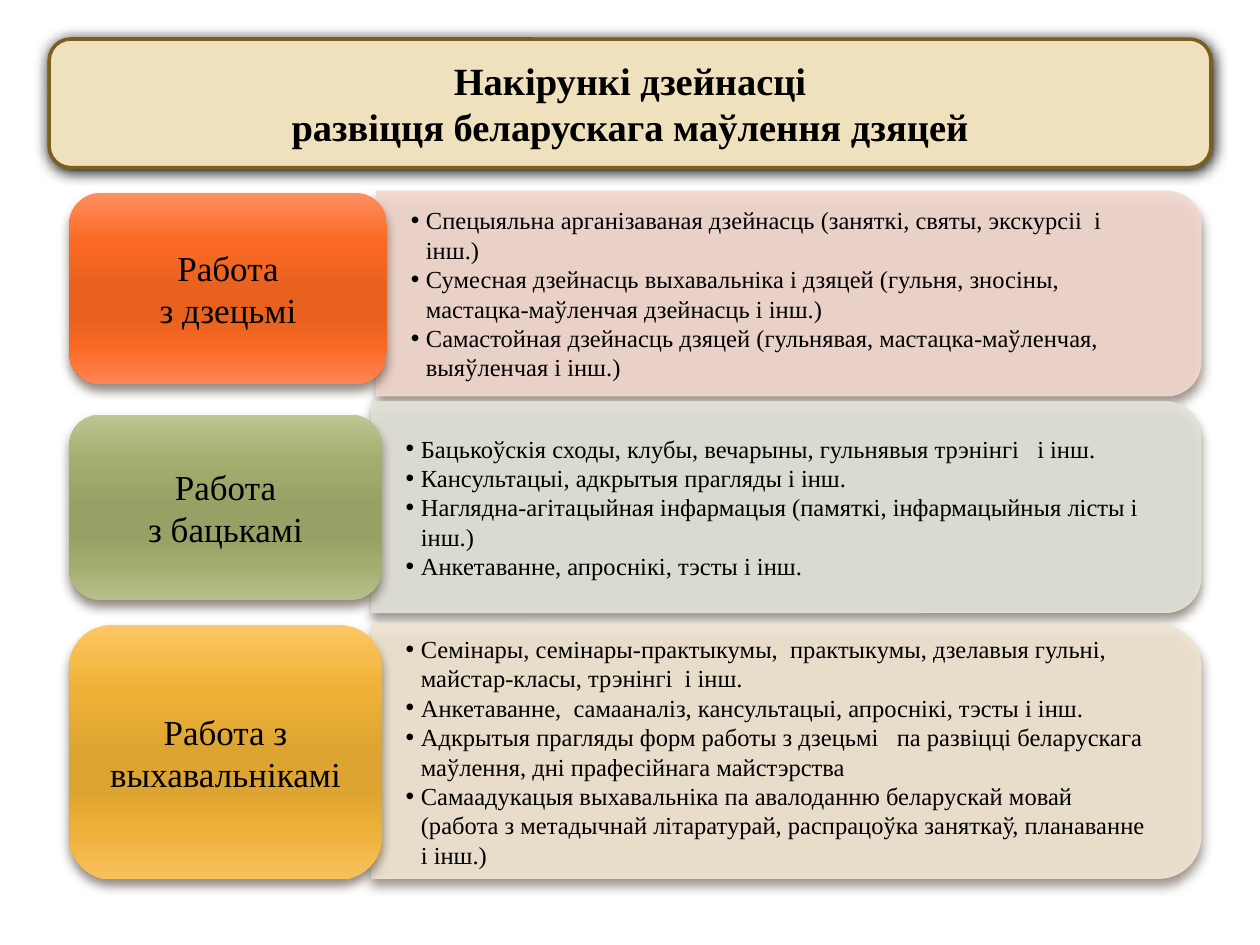
from dataclasses import dataclass

from lxml import etree
from pptx import Presentation
from pptx.dml.color import RGBColor
from pptx.enum.shapes import MSO_SHAPE
from pptx.enum.text import MSO_ANCHOR, MSO_AUTO_SIZE, PP_ALIGN
from pptx.oxml.ns import qn
from pptx.util import Inches, Pt

ROUND = MSO_SHAPE.ROUNDED_RECTANGLE
TAB = MSO_SHAPE.ROUND_2_SAME_RECTANGLE
MIDDLE = MSO_ANCHOR.MIDDLE
NO_FIT = MSO_AUTO_SIZE.NONE
CENTER, LEFT = PP_ALIGN.CENTER, PP_ALIGN.LEFT


@dataclass(frozen=True)
class Theme:
    """Colours and type sizes of the slide."""
    font: str = "Times New Roman"
    ink: str = "000000"
    cream: str = "EFE0BE"
    edge: str = "7C5F1E"
    shade: str = "4E3B30"
    head: int = 22
    label: int = 20
    item: int = 14
    stops: tuple = (0, 25, 50, 65, 80, 100)


ROWS = [
    dict(panel=(2.99, 1.52, 6.54, 1.62), tint="F2D8CF", width=6.46,
         label=(0.55, 1.53, 2.52, 1.52), inset=0.15,
         ramp=("FF8F62", "FB6A25", "E9611F", "E9611F", "F96924", "FF8554"),
         name=["Работа", "з дзецьмi"],
         items=["Спецыяльна арганiзаваная дзейнасць (заняткi, святы, экскурсii  i iнш.)",
                "Сумесная дзейнасць выхавальнiка i дзяцей (гульня, зносiны, "
                "мастацка-маўленчая дзейнасць i iнш.)",
                "Самастойная дзейнасць дзяцей (гульнявая, мастацка-маўленчая, "
                "выяўленчая i iнш.)"]),
    dict(panel=(2.95, 3.19, 6.58, 1.67), tint="E1E2D8", width=6.5,
         label=(0.55, 3.29, 2.48, 1.47), inset=0.15,
         ramp=("BEC692", "A3AD6E", "97A065", "97A065", "A2AC6D", "B7BF8B"),
         name=["Работа", "з бацькамi"],
         items=["Бацькоўскiя сходы, клубы, вечарыны, гульнявыя трэнiнгi   i iнш.",
                "Кансультацыi, адкрытыя прагляды i iнш.",
                "Наглядна-агiтацыйная iнфармацыя (памяткi, iнфармацыйныя лiсты i iнш.)",
                "Анкетаванне, апроснiкi, тэсты i iнш."]),
    dict(panel=(2.95, 4.96, 6.58, 2.01), tint="F0E4D2", width=6.48,
         label=(0.55, 4.96, 2.48, 2.02), inset=0.18,
         ramp=("FEC766", "EFB137", "DEA431", "DEA431", "EDB037", "F8C15E"),
         name=["Работа з выхавальнiкамi"],
         items=["Семiнары, семiнары-практыкумы,  практыкумы, дзелавыя гульнi, "
                "майстар-класы, трэнiнгi  i iнш.",
                "Анкетаванне,  самааналiз, кансультацыi, апроснiкi, тэсты i iнш.",
                "Адкрытыя прагляды форм работы з дзецьмi   па развiццi беларускага "
                "маўлення, дні прафесійнага майстэрства",
                "Самаадукацыя выхавальнiка па авалоданню беларускай мовай  (работа з "
                "метадычнай лiтаратурай, распрацоўка заняткаў, планаванне i iнш.)"]),
]


class Deck:
    """Holds the theme and the current slide."""

    def __init__(self, theme, slide):
        self.theme, self.slide = theme, slide

    def color(self, node, value, alpha=100):
        tint = etree.SubElement(node, qn("a:srgbClr"), val=value)
        if alpha < 100:
            etree.SubElement(tint, qn("a:alpha"), val=str(alpha * 1000))

    def shadow(self, shape, value, alpha, blur, dist):
        shape.shadow.inherit = False
        glow = etree.SubElement(
            shape.element.spPr.find(qn("a:effectLst")), qn("a:outerShdw"),
            blurRad=str(Pt(blur)), dist=str(Pt(dist)), dir="5400000",
            algn="ctr", rotWithShape="0")
        self.color(glow, value, alpha)

    def shape(self, kind, box):
        return self.slide.shapes.add_shape(kind, *map(Inches, box))

    def text(self, shape, lines, size, align, inset, bold=False, bullet=False):
        frame = shape.text_frame
        frame.word_wrap, frame.auto_size = True, NO_FIT
        frame.vertical_anchor = MIDDLE
        frame.margin_left = frame.margin_right = Inches(inset)
        frame.margin_top = frame.margin_bottom = Inches(0.05)
        frame.text = "\n".join(lines)
        for para in frame.paragraphs:
            props = para._p.get_or_add_pPr()
            props.set("marL", str(Inches(0.12) if bullet else 0))
            props.set("indent", str(Inches(-0.12) if bullet else 0))
            if bullet:
                etree.SubElement(props, qn("a:buChar"), char="•")
            para.alignment = align
            para.space_before = para.space_after = Pt(0)
            para.line_spacing = 1.0
            font = para.font
            font.name, font.size, font.bold = self.theme.font, Pt(size), bold
            font.color.rgb = RGBColor.from_string(self.theme.ink)

    def place(self, holder, box):
        holder.left, holder.top, holder.width, holder.height = map(Inches, box)
        holder.element.getparent().append(holder.element)

    def title(self, lines, box):
        card = self.shape(ROUND, box)
        card.fill.solid()
        card.fill.fore_color.rgb = RGBColor.from_string(self.theme.cream)
        card.line.color.rgb = RGBColor.from_string(self.theme.edge)
        card.line.width = Pt(2)
        self.shadow(card, "000000", 100, 8.5, 1)
        holder = self.slide.shapes.title
        self.place(holder, box)
        self.text(holder, lines, self.theme.head, CENTER, 0.1, bold=True)

    def panel(self, box, tint):
        left, top, width, height = box
        shift = (width - height) / 2
        panel = self.shape(TAB, (left + shift, top - shift, height, width))
        panel.rotation = 90
        panel.line.width = Pt(0.79)
        for paint in (panel.fill, panel.line.fill):
            paint.solid()
            paint.fore_color.rgb = RGBColor.from_string(tint)
        for clear in panel.element.spPr.iter(qn("a:srgbClr")):
            etree.SubElement(clear, qn("a:alpha"), val="90000")
        self.shadow(panel, self.theme.shade, 60, 6, 4)

    def list(self, holder, items, box):
        self.place(holder, box)
        self.text(holder, items, self.theme.item, LEFT, 0.27, bullet=True)

    def label(self, lines, box, ramp, inset):
        label = self.shape(ROUND, box)
        label.fill.gradient()
        label.fill.gradient_angle = 270
        stops = label.element.spPr.find(qn("a:gradFill")).find(qn("a:gsLst"))
        stops[:] = []
        for spot, value in zip(self.theme.stops, ramp):
            stop = etree.SubElement(stops, qn("a:gs"), pos=str(spot * 1000))
            self.color(stop, value)
        label.line.fill.background()
        self.shadow(label, self.theme.shade, 60, 6, 4)
        self.text(label, lines, self.theme.label, CENTER, inset)


def main():
    show = Presentation()
    show.slide_width, show.slide_height = Inches(10), Inches(7.5)
    slide = show.slides.add_slide(show.slide_layouts[4])
    deck = Deck(Theme(), slide)
    lists = list(slide.placeholders)[1:]
    deck.title(["Накірункі дзейнасці", "развіцця беларускага маўлення дзяцей"],
               (0.39, 0.31, 9.22, 1.02))
    for row, holder in zip(ROWS, lists):
        left, top, _, height = row["panel"]
        deck.panel(row["panel"], row["tint"])
        deck.list(holder, row["items"], (left, top, row["width"], height))
        deck.label(row["name"], row["label"], row["ramp"], row["inset"])
    spare = lists[-1].element
    spare.getparent().remove(spare)
    show.save("out.pptx")


if __name__ == "__main__":
    main()
